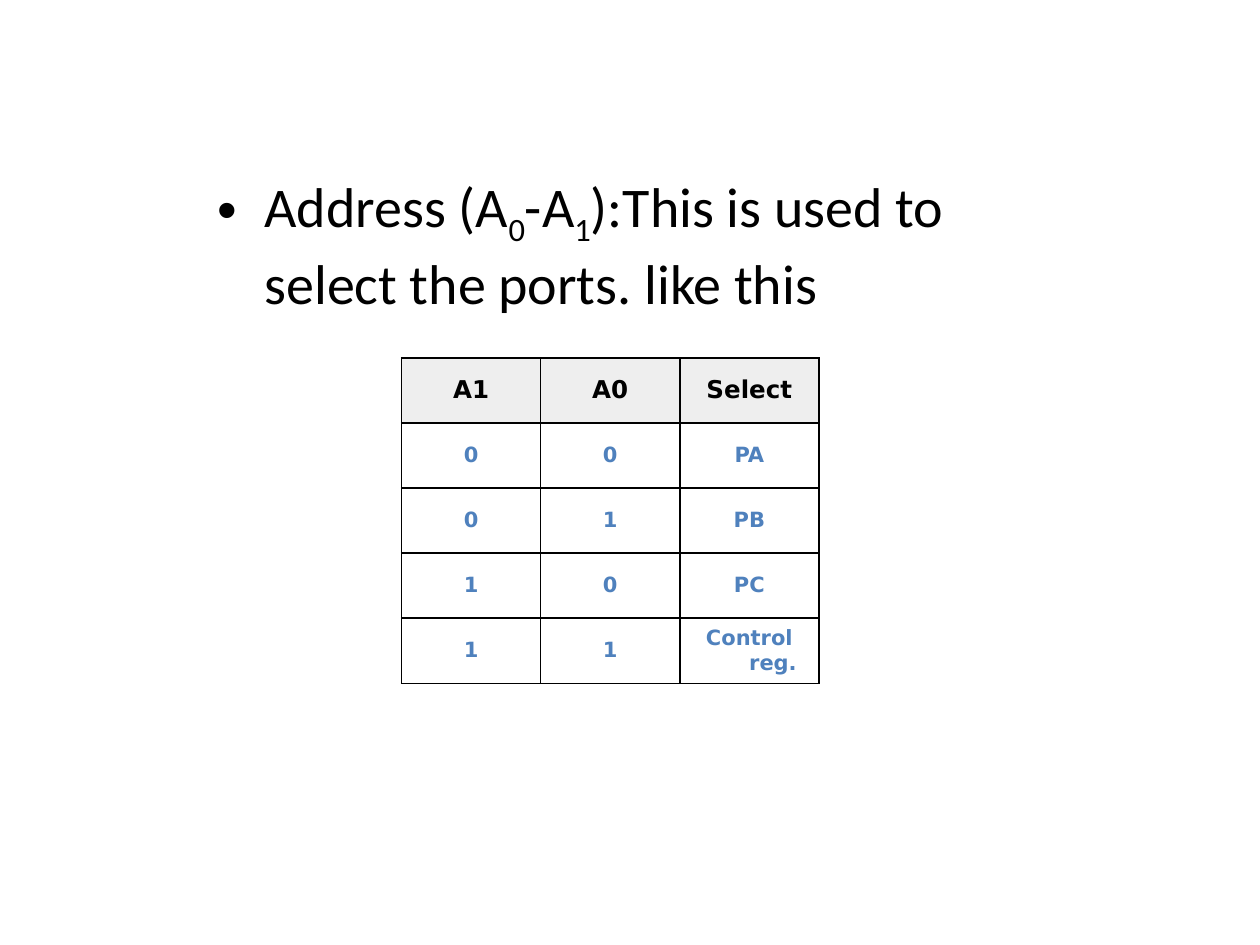
from lxml import etree
from pptx import Presentation
from pptx.dml.color import RGBColor
from pptx.enum.text import MSO_ANCHOR, PP_ALIGN
from pptx.oxml.ns import qn
from pptx.util import Pt

CENTER = PP_ALIGN.CENTER
MIDDLE = MSO_ANCHOR.MIDDLE
COLORS = {"text": "000000", "border": "000000", "header": "EEEEEE", "value": "4F81BD"}
HANGING = Pt(27)


def style_run(run, font_name, size, color, bold=False):
    run.font.name = font_name
    run.font.size = Pt(size)
    run.font.bold = bold
    run.font.color.rgb = RGBColor.from_string(COLORS[color])


def hang(paragraph):
    properties = paragraph._p.get_or_add_pPr()
    properties.set("marL", str(HANGING))
    properties.set("indent", str(-HANGING))
    return properties


prs = Presentation()
prs.slide_width, prs.slide_height = Pt(720), Pt(540)
slide = prs.slides.add_slide(prs.slide_layouts[6])

address = slide.shapes.add_textbox(Pt(117), Pt(94.5), Pt(486), Pt(429)).text_frame
address.word_wrap = True
sentence = address.paragraphs[0]
sentence.space_before = Pt(6.4)
bullet_properties = hang(sentence)
etree.SubElement(bullet_properties, qn("a:buFont")).set("typeface", "Arial")
etree.SubElement(bullet_properties, qn("a:buChar")).set("char", "•")
for words, baseline in [
    ("Address (A", 0),
    ("0", -25000),
    ("-A", 0),
    ("1", -25000),
    ("):This is used to select the ports. like this", 0),
]:
    run = sentence.add_run()
    run.text = words
    style_run(run, "Calibri", 32, "text")
    if baseline:
        run._r.get_or_add_rPr().set("baseline", str(baseline))

port_rows = [
    ("A1", "A0", "Select"),
    ("0", "0", "PA"),
    ("0", "1", "PB"),
    ("1", "0", "PC"),
    ("1", "1", "Control reg."),
]
ports = slide.shapes.add_table(5, 3, Pt(229.5), Pt(204.5), Pt(238.5), Pt(186)).table
for column in ports.columns:
    column.width = Pt(79.5)
for row in ports.rows:
    row.height = Pt(37.2)

for row_index, values in enumerate(port_rows):
    is_header = row_index == 0
    for column_index, value in enumerate(values):
        cell = ports.cell(row_index, column_index)
        cell.text = value
        cell.vertical_anchor = MIDDLE
        cell.margin_left = cell.margin_right = Pt(5)
        cell.margin_top = cell.margin_bottom = Pt(2.75)
        for side in ("a:lnL", "a:lnR", "a:lnT", "a:lnB"):
            border = etree.SubElement(cell._tc.get_or_add_tcPr(), qn(side), w=str(Pt(1)))
            border_fill = etree.SubElement(border, qn("a:solidFill"))
            etree.SubElement(border_fill, qn("a:srgbClr"), val=COLORS["border"])
        if is_header:
            cell.fill.solid()
            cell.fill.fore_color.rgb = RGBColor.from_string(COLORS["header"])
        else:
            cell.fill.background()
        entry = cell.text_frame.paragraphs[0]
        entry.alignment = CENTER
        hang(entry)
        style_run(entry.runs[0], "DejaVu Sans", 14 if is_header else 12,
                  "text" if is_header else "value", bold=True)

prs.save("out.pptx")
